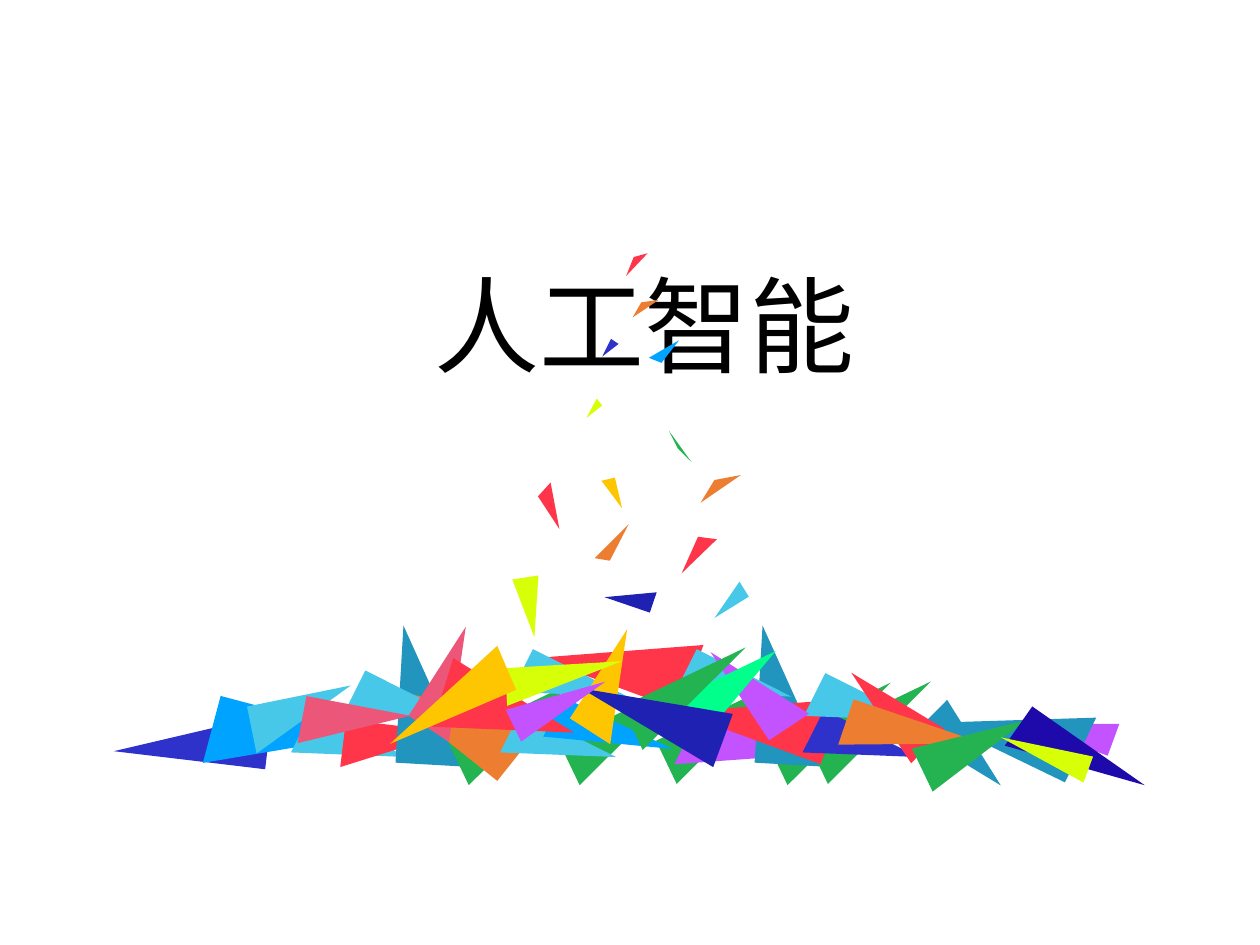
from lxml.etree import SubElement
from pptx import Presentation
from pptx.dml.color import RGBColor
from pptx.enum.shapes import MSO_SHAPE as Preset
from pptx.enum.text import MSO_ANCHOR as Anchor, PP_ALIGN as Align
from pptx.oxml.ns import qn
from pptx.util import Inches, Pt

COLUMNS, ROWS = 1000, 750
SLIDE_W, SLIDE_H = Inches(10), Inches(7.5)
FONT = "Noto Sans CJK SC"
COLORS = {
    "red": "FF354A", "blue": "2E32CA", "azure": "00A3FF", "sky": "48C8E8",
    "teal": "2295BE", "green": "24B351", "leaf": "25B352", "orange": "ED7D31",
    "violet": "C253FF", "gold": "FEC601", "mint": "00FF8B", "pink": "EB5679",
    "lime": "D7FF08", "navy": "1E21B2", "indigo": "1E0AAB", "ink": "000000",
}
RIGHT, PEAK = Preset.RIGHT_TRIANGLE, Preset.ISOSCELES_TRIANGLE
SMALL, LONG, WIDE = (38, 84), (38, 109), (57, 109)
BROAD, LARGE = (55, 121), (55, 120)

TITLE_BOX = (90, 205, 843, 111)
PILE_BOX = (90, 450)
SPRAY_BOX = (400, 190)

PILE = [
    (375, 7, LARGE, 290.2, "red", RIGHT),
    (41, 71, (44, 121), 276.8, "blue", RIGHT),
    (109, 84, BROAD, 104.9, "azure", RIGHT),
    (168, 107, SMALL, 116.6, "sky", RIGHT),
    (205, 103, SMALL, 96.9, "red", RIGHT),
    (227, 48, WIDE, 3.3, "teal", RIGHT),
    (304, 78, LONG, 64.4, "green", RIGHT),
    (392, 78, LONG, 64.4, "green", RIGHT),
    (247, 50, BROAD, 308.6, "orange", RIGHT),
    (334, 107, SMALL, 116.6, "sky", RIGHT),
    (469, 77, LONG, 64.4, "green", RIGHT),
    (557, 78, LONG, 64.4, "green", RIGHT),
    (375, 91, (35, 97), 115.3, "azure", RIGHT),
    (469, 111, (50, 84), 116.6, "violet", RIGHT),
    (512, 48, WIDE, 3.3, "teal", RIGHT),
    (589, 77, LONG, 64.4, "green", RIGHT),
    (487, 50, LARGE, 290.2, "red", RIGHT),
    (574, 107, SMALL, 116.6, "blue", RIGHT),
    (658, 107, (37, 78), 134.6, "teal", PEAK),
    (575, 78, SMALL, 116.6, "sky", RIGHT),
    (597, 71, SMALL, 313.8, "red", PEAK),
    (473, 59, SMALL, 116.6, "sky", RIGHT),
    (494, 50, SMALL, 326.4, "violet", RIGHT),
    (343, 59, SMALL, 116.6, "sky", RIGHT),
    (382, 53, SMALL, 32.7, "gold", RIGHT),
    (477, 60, SMALL, 64.4, "mint", RIGHT),
    (614, 86, LONG, 108.7, "orange", RIGHT),
    (210, 76, SMALL, 116.6, "sky", RIGHT),
    (254, 51, SMALL, 32.7, "pink", RIGHT),
    (285, 61, WIDE, 107, "red", PEAK),
    (343, 46, (30, 93), 86.6, "lime", RIGHT),
    (442, 50, LONG, 64.4, "green", RIGHT),
    (405, 57, (45, 120), 290.2, "navy", PEAK),
    (132, 79, SMALL, 78.5, "sky", RIGHT),
    (172, 87, SMALL, 100.7, "pink", RIGHT),
    (243, 47, LONG, 246.8, "gold", RIGHT),
    (340, 68, (28, 81), 64.4, "violet", PEAK),
    (746, 88, (27, 73), 290.2, "violet", RIGHT),
    (690, 67, WIDE, 295.8, "teal", RIGHT),
    (664, 96, (38, 91), 64.4, "leaf", PEAK),
    (744, 103, LONG, 125, "indigo", RIGHT),
    (728, 111, (22, 74), 290.2, "lime", PEAK),
]

FLAKES = [
    (80, 190, (11, 25), 166.9, "gold", RIGHT),
    (92, 263, (17, 38), 288.8, "navy", RIGHT),
    (170, 270, (14, 32), 238.2, "sky", RIGHT),
    (10, 268, (21, 48), 171.4, "lime", PEAK),
    (66, 126, (7, 16), 231.7, "lime", RIGHT),
]

SPLINTERS = [
    ("orange", [(188, 187), (156, 209), (167, 191)]),
    ("red", [(169, 238), (141, 265), (154, 236)]),
    ("leaf", [(131, 152), (149, 177), (138, 166)]),
    ("orange", [(99, 226), (72, 253), (84, 255)]),
    ("azure", [(115, 94), (139, 80), (125, 98)]),
    ("orange", [(123, 48), (102, 62), (109, 50)]),
    ("red", [(37, 193), (44, 230), (27, 204)]),
    ("red", [(114, 11), (97, 29), (103, 14)]),
    ("blue", [(91, 83), (78, 93), (85, 79)]),
]


def across(columns):
    """Return the length of a number of grid columns."""
    return round(SLIDE_W * columns / COLUMNS)


def down(rows):
    """Return the length of a number of grid rows."""
    return round(SLIDE_H * rows / ROWS)


def paint(shard, color):
    """Give a shard a flat colour without outline or shadow."""
    shard.shadow.inherit = False
    shard.fill.solid()
    shard.fill.fore_color.rgb = RGBColor.from_string(COLORS[color])
    shard.line.fill.background()


def scatter(shapes, box, triangles):
    """Place rotated triangles relative to the corner of a box."""
    left, top = box
    for x, y, (width, height), angle, color, preset in triangles:
        shard = shapes.add_shape(preset, across(left + x), down(top + y),
                                 across(width), down(height))
        shard.rotation = angle
        paint(shard, color)


def draw_pile(slide, box):
    """Draw the heap of shards as one group."""
    scatter(slide.shapes.add_group_shape().shapes, box, PILE)


def draw_spray(slide, box):
    """Draw the flakes and splinters rising from the heap."""
    left, top = box
    scatter(slide.shapes, box, FLAKES)
    for color, corners in SPLINTERS:
        start, *rest = [(across(left + x), down(top + y)) for x, y in corners]
        outline = slide.shapes.build_freeform(*start)
        outline.add_line_segments(rest, close=True)
        paint(outline.convert_to_shape(), color)


def write_title(slide, box):
    """Write the centred title in its box."""
    left, top, width, height = box
    title = slide.shapes.add_textbox(across(left), down(top),
                                     across(width), down(height))
    frame = title.text_frame
    frame.word_wrap = True
    frame.vertical_anchor = Anchor.MIDDLE
    frame.margin_bottom = down(13)
    line = frame.paragraphs[0]
    line.alignment = Align.CENTER
    words = line.add_run()
    words.text = "人工智能"
    words.font.size = Pt(60)
    words.font.name = FONT
    words.font.color.rgb = RGBColor.from_string(COLORS["ink"])
    SubElement(words.font._element, qn("a:ea")).set("typeface", FONT)


def main():
    """Build the slide and save it."""
    deck = Presentation()
    deck.slide_width, deck.slide_height = SLIDE_W, SLIDE_H
    slide = deck.slides.add_slide(deck.slide_layouts[6])
    draw_pile(slide, PILE_BOX)
    write_title(slide, TITLE_BOX)
    draw_spray(slide, SPRAY_BOX)
    deck.save("out.pptx")


if __name__ == "__main__":
    main()
